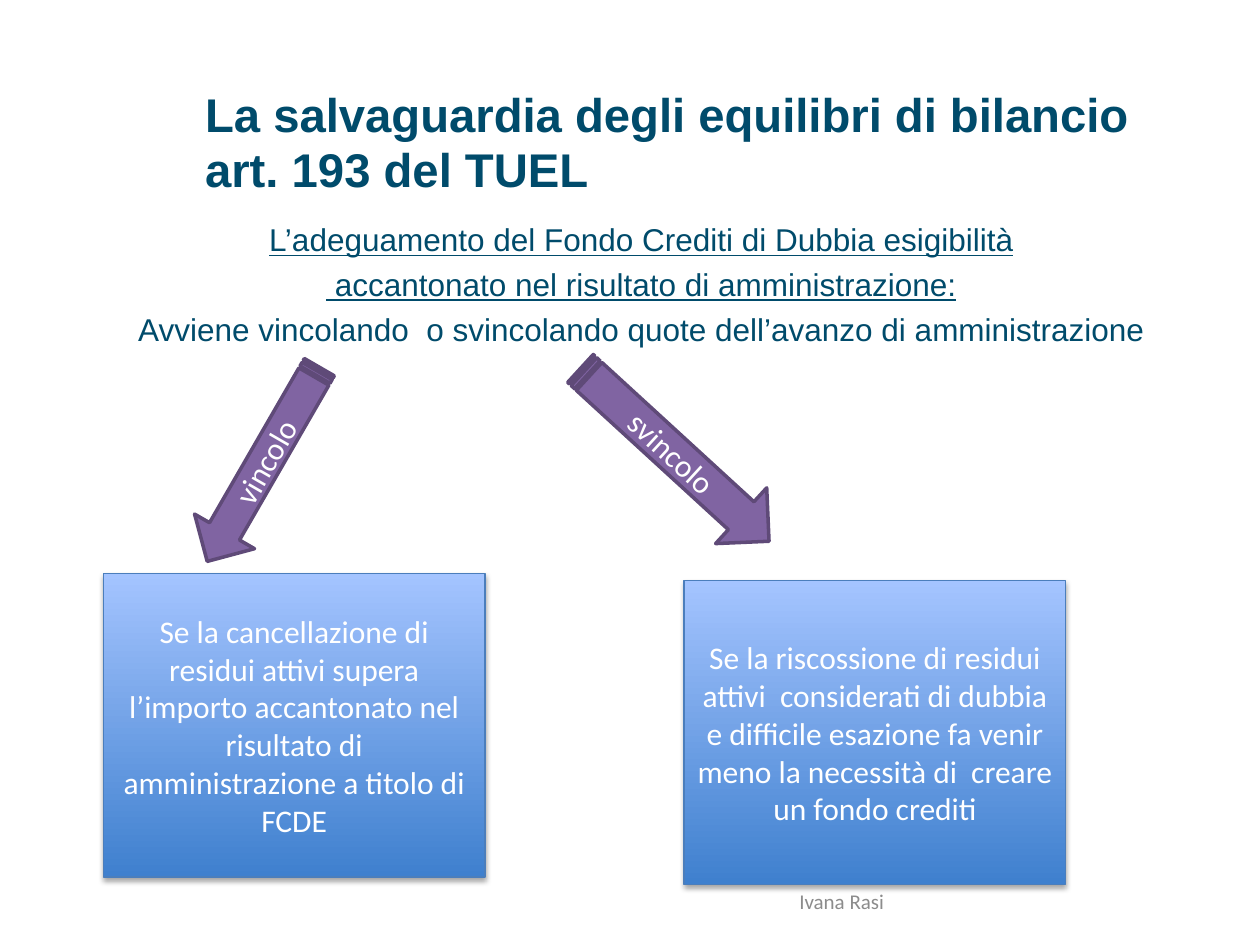
"""Build the slide on safeguarding budget balance, art. 193 of the TUEL."""
from lxml import etree
from pptx import Presentation
from pptx.dml.color import RGBColor
from pptx.enum import shapes, text
from pptx.oxml.ns import qn
from pptx.util import Inches, Pt

COLORS = {
    "heading": "004B6B", "arrow": "8064A2", "arrow_line": "5F4A78",
    "box_dark": "3F80CE", "box_light": "A4C4FF", "box_line": "4B7EBC",
    "white": "FFFFFF", "footer": "8C8C8C", "shadow": "000000",
}


def rgb(name):
    return RGBColor.from_string(COLORS[name])


def write(sp, *lines, size=18, font="Calibri", color="white", bold=False,
          underlined=0, align=text.PP_ALIGN.CENTER,
          anchor=text.MSO_ANCHOR.MIDDLE, spacing=None, before=None):
    tf = sp.text_frame
    tf.word_wrap = True
    tf.vertical_anchor = anchor
    for i, line in enumerate(lines):
        p = tf.add_paragraph() if i else tf.paragraphs[0]
        p.text = line
        p.alignment = align
        if spacing:
            p.line_spacing = Pt(spacing)
        if before and i:
            p.space_before = Pt(before)
        for r in p.runs:
            r.font.size = Pt(size)
            r.font.name = font
            r.font.bold = bold
            r.font.underline = i < underlined
            r.font.color.rgb = rgb(color)


prs = Presentation()
prs.slide_width, prs.slide_height = Inches(10), Inches(7.5)
s = prs.slides.add_slide(prs.slide_layouts[6])

title = s.shapes.add_textbox(Inches(1.53), Inches(0.65), Inches(7.84), Inches(0.96))
write(title, "La salvaguardia degli equilibri di bilancio\vart. 193 del TUEL",
      size=27, font="Arial", color="heading", bold=True, spacing=31,
      align=text.PP_ALIGN.LEFT, anchor=text.MSO_ANCHOR.TOP)

body = s.shapes.add_textbox(Inches(0.82), Inches(1.7), Inches(8.54), Inches(5.57))
write(body, "L’adeguamento del Fondo Crediti di Dubbia esigibilità",
      " accantonato nel risultato di amministrazione:",
      "Avviene vincolando  o svincolando quote dell’avanzo di amministrazione",
      font="Arial", color="heading", underlined=2, before=4,
      anchor=text.MSO_ANCHOR.TOP)

boxes = [
    (0.82, 4.55, "Se la cancellazione di residui attivi supera l’importo accantonato "
                 "nel risultato di amministrazione a titolo di FCDE"),
    (5.43, 4.61, "Se la riscossione di residui attivi  considerati di dubbia e difficile "
                 "esazione fa venir meno la necessità di  creare un fondo crediti"),
]
for left, top, label in boxes:
    sp = s.shapes.add_shape(shapes.MSO_SHAPE.RECTANGLE, Inches(left), Inches(top),
                            Inches(3.03), Inches(2.41))
    sp.fill.gradient()
    sp.fill.gradient_angle = 90
    for stop, position, name in zip(sp.fill.gradient_stops, (0, 1),
                                    ("box_dark", "box_light")):
        stop.position = position
        stop.color.rgb = rgb(name)
    sp.line.color.rgb = rgb("box_line")
    sp.line.width = Pt(0.75)
    sp.shadow.inherit = False
    effects = sp._element.spPr.find(qn("a:effectLst"))
    shadow = etree.SubElement(effects, qn("a:outerShdw"), blurRad=str(Pt(3.1)),
                              dist=str(Pt(1.8)), dir="5400000", rotWithShape="0")
    tint = etree.SubElement(shadow, qn("a:srgbClr"), val=COLORS["shadow"])
    etree.SubElement(tint, qn("a:alpha"), val="35000")
    write(sp, label)

arrows = [
    (1.2, 3.41, 1.78, 0.55, 300, True, "vincolo"),
    (4.34, 3.31, 2.03, 0.6, 42.5, False, "svincolo"),
]
for left, top, width, height, angle, flipped, label in arrows:
    sp = s.shapes.add_shape(shapes.MSO_SHAPE.STRIPED_RIGHT_ARROW, Inches(left),
                            Inches(top), Inches(width), Inches(height))
    sp.rotation = angle
    if flipped:
        sp._element.spPr.find(qn("a:xfrm")).set("flipH", "1")
    sp.fill.solid()
    sp.fill.fore_color.rgb = rgb("arrow")
    sp.line.color.rgb = rgb("arrow_line")
    sp.line.width = Pt(2)
    sp.shadow.inherit = False
    write(sp, label)

footer = s.shapes.add_textbox(Inches(5.94), Inches(6.95), Inches(1.48), Inches(0.4))
write(footer, "Ivana Rasi", size=12, color="footer")

prs.save("out.pptx")
